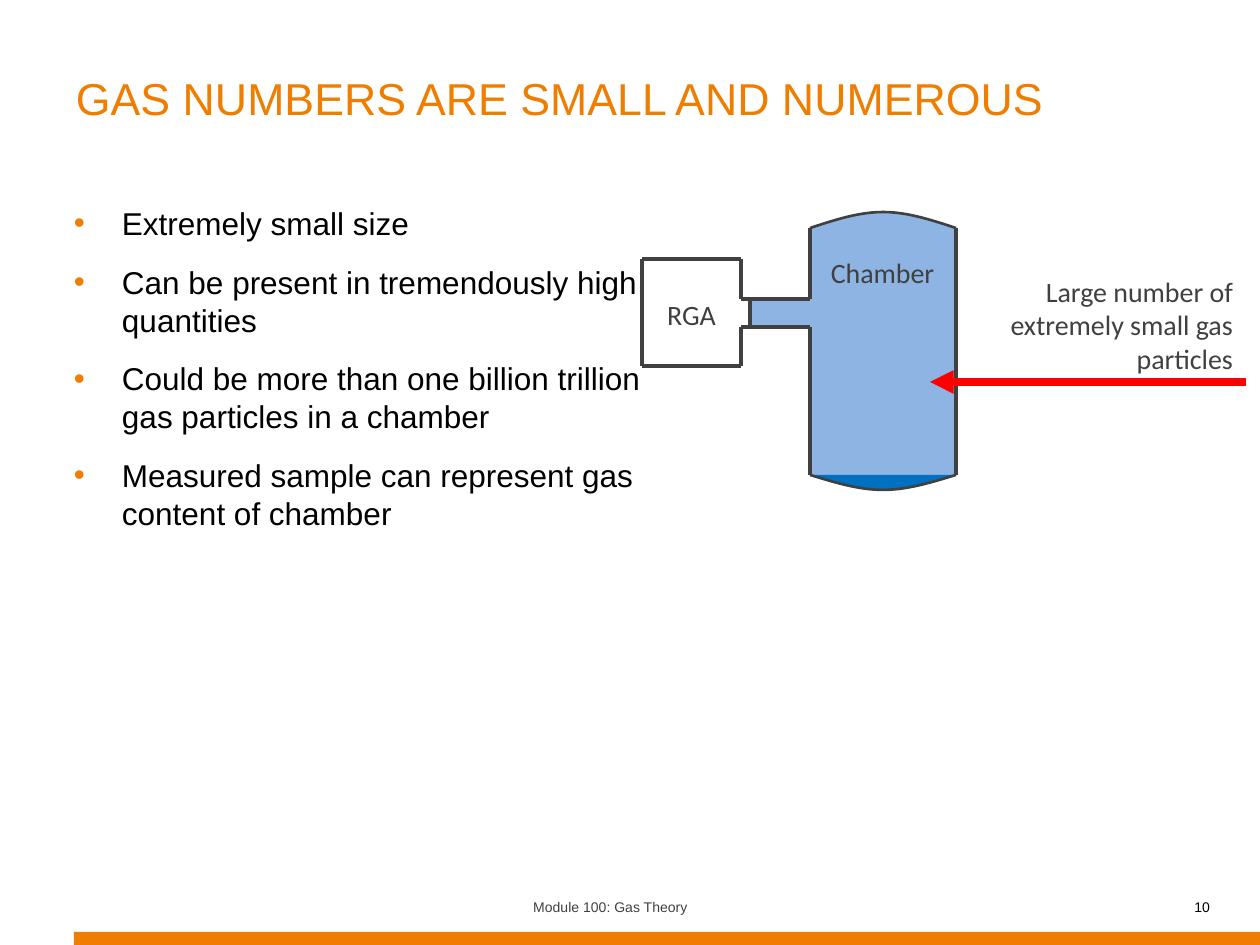
from lxml import etree
from pptx import Presentation
from pptx import util as u
from pptx.dml.color import RGBColor
from pptx.enum import shapes, text
from pptx.oxml import ns

PX = 914400 / 126
ORANGE, GREY, BLACK = "EF7D00", "404040", "000000"
GAS, LIQUID, RED = "8EB4E3", "0070C0", "FF0000"
LEFT, CENTER, RIGHT = text.PP_ALIGN.LEFT, text.PP_ALIGN.CENTER, text.PP_ALIGN.RIGHT
BULLETS = [
    "Extremely small size",
    "Can be present in tremendously high quantities",
    "Could be more than one billion trillion gas particles in a chamber",
    "Measured sample can represent gas content of chamber",
]


def px(length):
    return u.Emu(round(length * PX))


def color(value):
    return RGBColor.from_string(value)


def child(parent, tag, **attributes):
    return etree.SubElement(parent, ns.qn(tag), attributes)


def add_text(page, box, lines, size, ink, font="Arial", align=LEFT,
             anchor=text.MSO_ANCHOR.TOP, side=13, after=0, bullet=False):
    frame = page.shapes.add_textbox(*map(px, box)).text_frame
    frame.word_wrap = True
    frame.vertical_anchor = anchor
    frame.margin_left = frame.margin_right = px(side)
    frame.text = "\n".join(lines)
    for para in frame.paragraphs:
        para.alignment = align
        para.space_after = u.Pt(after)
        if bullet:
            add_bullet(para)
        for span in para.runs:
            span.font.size = u.Pt(size)
            span.font.name = font
            span.font.color.rgb = color(ink)
    return frame


def add_bullet(para):
    props = para._p.get_or_add_pPr()
    props.set("marL", str(px(48)))
    props.set("indent", str(px(-48)))
    child(child(props, "a:buClr"), "a:srgbClr", val=ORANGE)
    child(props, "a:buFont", typeface="Arial")
    child(props, "a:buChar", char="•")


def paint(shape, fill=None, line=None, width=1.5):
    shape.shadow.inherit = False
    if fill:
        shape.fill.solid()
        shape.fill.fore_color.rgb = color(fill)
    else:
        shape.fill.background()
    if line:
        shape.line.color.rgb = color(line)
        shape.line.width = u.Pt(width)
    else:
        shape.line.fill.background()


def add_block(page, box, fill):
    paint(page.shapes.add_shape(shapes.MSO_SHAPE.RECTANGLE, *map(px, box)), fill)


def add_line(page, ends, ink=GREY, width=2):
    line = page.shapes.add_connector(shapes.MSO_CONNECTOR.STRAIGHT, *map(px, ends))
    line.line.color.rgb = color(ink)
    line.line.width = u.Pt(width)
    child(line._element.spPr, "a:effectLst")
    return line


def bezier(points, t):
    if len(points) == 1:
        return points[0]
    pairs = zip(points, points[1:])
    return bezier([(a + (c - a) * t, b + (d - b) * t) for (a, b), (c, d) in pairs], t)


def add_dome(page, left, right, edge, peak, fill):
    middle, reach = (left + right) / 2, (right - left) / 6
    halves = [
        [(left, edge), (left + reach, (edge + peak) / 2), (middle - reach, peak), (middle, peak)],
        [(middle, peak), (middle + reach, peak), (right - reach, (edge + peak) / 2), (right, edge)],
    ]
    curve = [bezier(half, step / 12) for half in halves for step in range(13)]
    points = [(px(x), px(y)) for x, y in curve]
    for closed in (True, False):
        builder = page.shapes.build_freeform(*points[0])
        builder.add_line_segments(points[1:], close=closed)
        dome = builder.convert_to_shape()
        if closed:
            paint(dome, fill)
        else:
            paint(dome, line=GREY)


def add_title(page, box):
    frame = add_text(page, box, ["GAS NUMBERS ARE SMALL AND NUMEROUS"], 44, ORANGE)
    frame.paragraphs[0].runs[0].font._element.set("baseline", "30000")


def add_footer(page, box):
    left, top, width, height = box
    middle = text.MSO_ANCHOR.MIDDLE
    add_text(page, (left + 337, top, 399, 50), ["Module 100: Gas Theory"], 8, GREY,
             align=CENTER, anchor=middle)
    add_text(page, (left + 842, top, 294, 50), ["10"], 8, BLACK,
             align=RIGHT, anchor=middle, side=0)
    add_block(page, (left, top + height - 13, width, 13), ORANGE)


def add_diagram(page, box):
    left, top, width, height = box
    gauge_right, inlet = left + 99, left + 108
    wall_left, wall_right = left + 168, left + 314
    gauge_top, gauge_bottom = top + 47, top + 154
    pipe_top, pipe_bottom = top + 87, top + 115
    wall_top, wall_bottom = top + 16, top + 263

    add_block(page, (inlet, pipe_top, wall_left - inlet, pipe_bottom - pipe_top), GAS)
    add_block(page, (wall_left, wall_top, wall_right - wall_left, wall_bottom - wall_top), GAS)
    add_dome(page, wall_left, wall_right, wall_top, top, GAS)
    add_dome(page, wall_left, wall_right, wall_bottom, top + height, LIQUID)

    for ends in [
        (left, gauge_top, left, gauge_bottom),
        (left, gauge_top, gauge_right, gauge_top),
        (left, gauge_bottom, gauge_right, gauge_bottom),
        (gauge_right, gauge_top, gauge_right, pipe_top),
        (gauge_right, pipe_bottom, gauge_right, gauge_bottom),
        (gauge_right, pipe_top, wall_left, pipe_top),
        (gauge_right, pipe_bottom, wall_left, pipe_bottom),
        (inlet, pipe_top, inlet, pipe_bottom),
        (wall_left, wall_top, wall_left, pipe_top),
        (wall_left, pipe_bottom, wall_left, wall_bottom),
        (wall_right, wall_top, wall_right, wall_bottom),
    ]:
        add_line(page, ends)

    arrow = add_line(page, (left + width, top + 170, left + 288, top + 170), RED, 4.5)
    child(arrow.line._get_or_add_ln(), "a:tailEnd", type="triangle")

    for label, place, align in [
        ("RGA", (left + 3, top + 79, 93, 47), CENTER),
        ("Chamber", (wall_left, top + 37, 145, 47), CENTER),
        ("Large number of extremely small gas particles",
         (left + 288, top + 56, 316, 78), RIGHT),
    ]:
        add_text(page, place, [label], 16, GREY, "Calibri", align)


def main():
    deck = Presentation()
    deck.slide_width, deck.slide_height = px(1260), px(945)
    page = deck.slides.add_slide(deck.slide_layouts[6])
    add_footer(page, (74, 882, 1186, 63))
    add_text(page, (74, 198, 568, 605), BULLETS, 18, BLACK, side=0, after=12, bullet=True)
    add_title(page, (63, 55, 1134, 158))
    add_diagram(page, (642, 212, 604, 278))
    deck.save("out.pptx")


if __name__ == "__main__":
    main()
